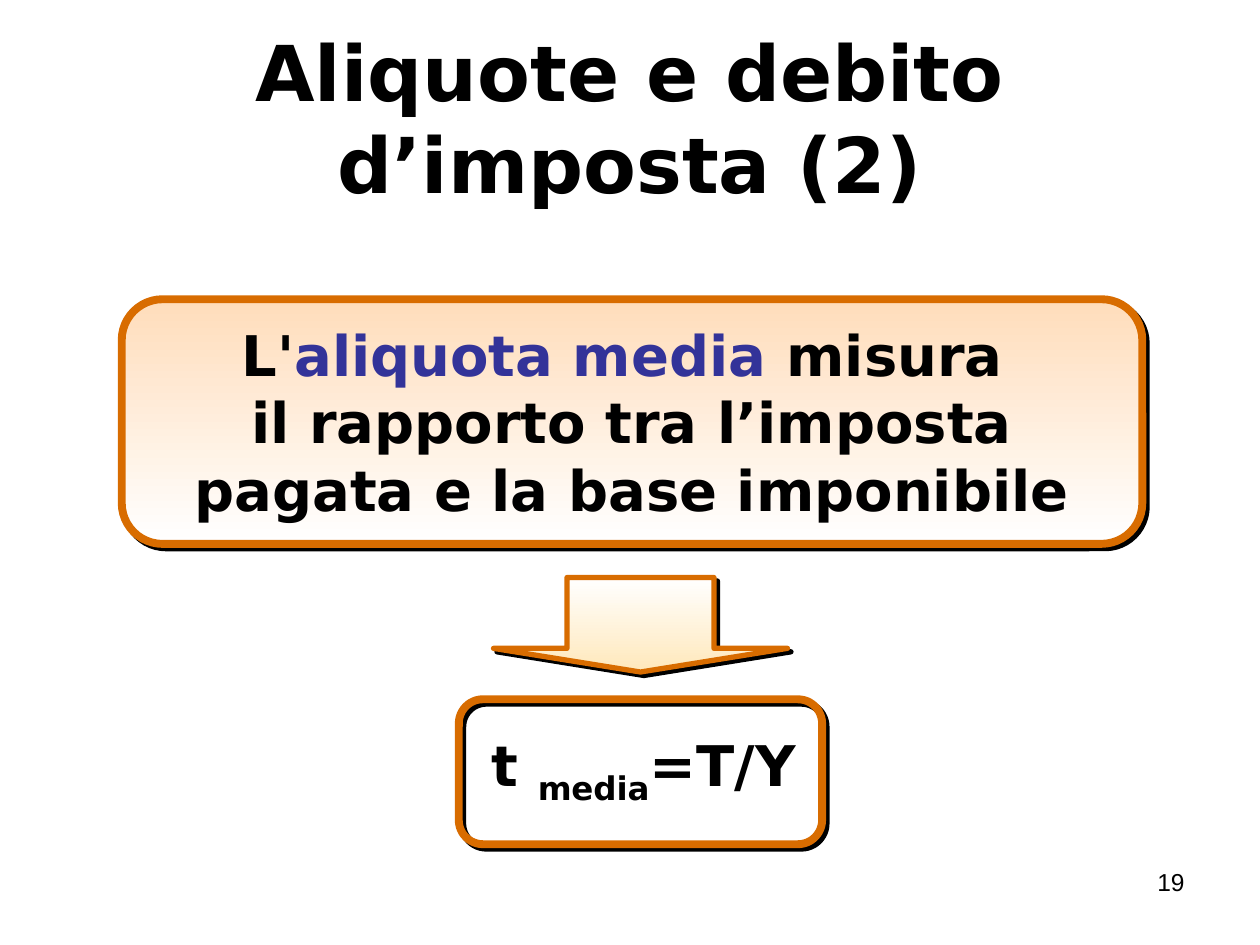
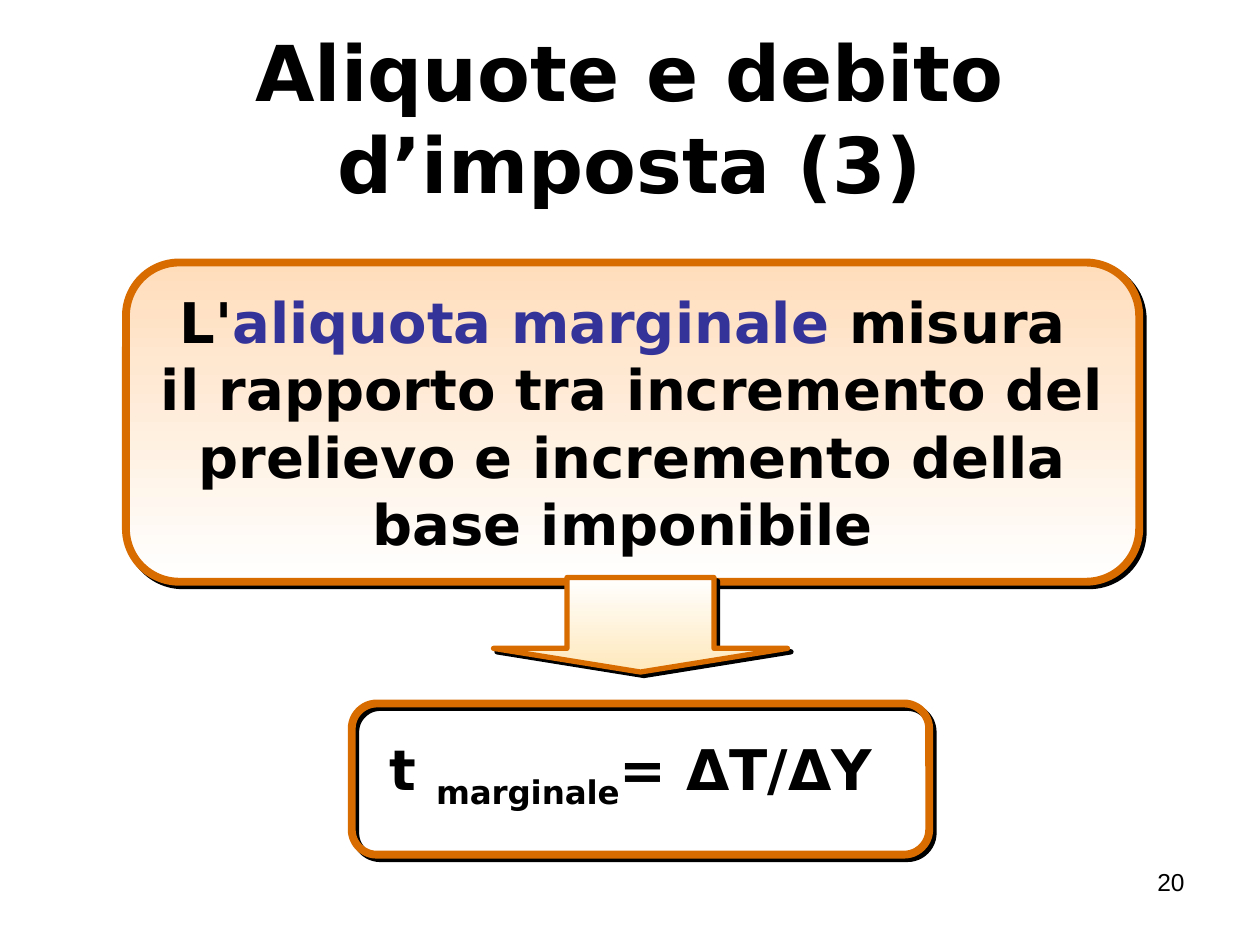
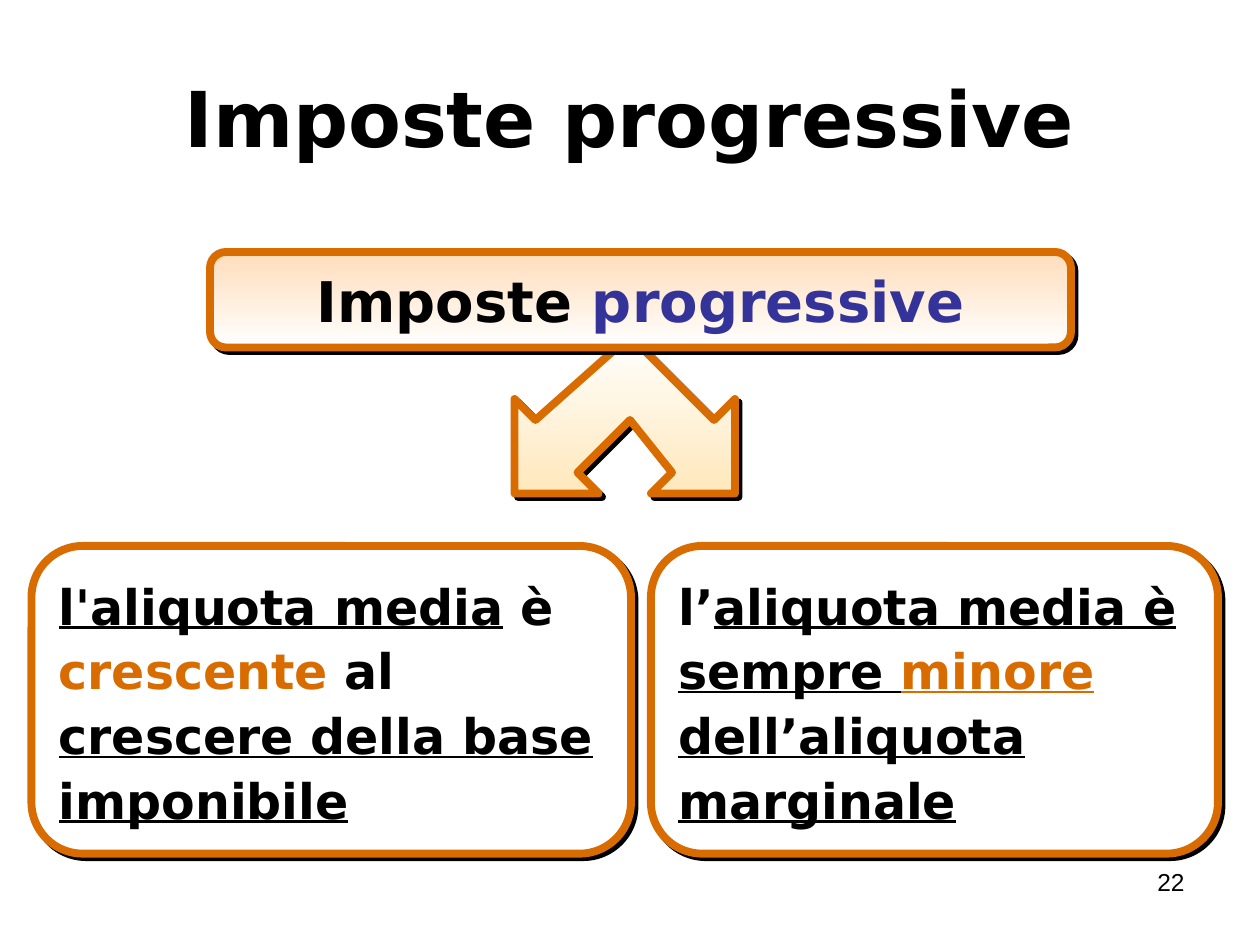
"""Build three slides on average, marginal and progressive tax rates."""
from dataclasses import dataclass

from lxml import etree
from pptx import Presentation
from pptx import util as u
from pptx.dml.color import RGBColor
from pptx.enum import shapes, text
from pptx.oxml.ns import qn


@dataclass(frozen=True)
class Theme:
    """Colours, fonts and type sizes shared by all slides."""
    black: str = "000000"
    white: str = "FFFFFF"
    blue: str = "333399"
    orange: str = "D86C00"
    peach: str = "FFDDBB"
    cream: str = "FFE8BB"
    face: str = "DejaVu Sans"
    number_face: str = "Arial"
    title_size: int = 44
    main_size: int = 32
    detail_size: int = 28
    number_size: int = 14
    thick: float = 4.5
    thin: float = 3


THEME = Theme()
COLUMNS, ROWS = 120, 90
CELL = u.Inches(10) // COLUMNS
CENTER, LEFT, RIGHT = text.PP_ALIGN.CENTER, text.PP_ALIGN.LEFT, text.PP_ALIGN.RIGHT
TITLE_AREA = (6, 3.6, 108, 15)
NUMBER_AREA = (86, 82, 28, 6.2)
ARROW_AREA = (47, 55, 28, 9)
SPLIT_APEX = (59.5, 32)
SPLIT_HALF = [(8.5, 8.4), (10.6, 6.3), (10.6, 14.7), (2.2, 14.7), (4.2, 12.6)]
SPLIT_NOTCH = (0, 8.4)


def place(area):
    """Turn grid columns and rows into slide lengths."""
    return [u.Emu(round(cells * CELL)) for cells in area]


def add_span(para, wording, color=None, underline=None, subscript=False):
    """Append a run, breaking the line at each newline."""
    for index, line in enumerate(wording.split("\n")):
        if index:
            para.add_line_break()
        span = para.add_run()
        span.text = line
        if color:
            span.font.color.rgb = RGBColor.from_string(color)
        if underline:
            span.font.underline = True
        if subscript:
            span._r.get_or_add_rPr().set("baseline", "-25000")


def write(box, spans, size, align=CENTER, middle=True, face=THEME.face, bold=True, spacing=None):
    """Fill a box with one paragraph made of spans."""
    frame = box.text_frame
    frame.word_wrap = True
    frame.vertical_anchor = text.MSO_ANCHOR.MIDDLE if middle else text.MSO_ANCHOR.TOP
    para = frame.paragraphs[0]
    para.alignment = align
    if spacing:
        para.line_spacing = spacing
    font = para.font
    font.name, font.size, font.bold = face, u.Pt(size), bold
    font.color.rgb = RGBColor.from_string(THEME.black)
    for wording, style in spans:
        add_span(para, wording, **style)


def add_text(page, area, spans, size, **style):
    """Add a text box on the grid."""
    write(page.shapes.add_textbox(*place(area)), spans, size, **style)


def decorate(shape, colors=(), width=THEME.thick):
    """Give a shape its fill, orange outline and hard shadow."""
    if not colors:
        shape.fill.background()
    elif len(colors) == 1:
        shape.fill.solid()
        shape.fill.fore_color.rgb = RGBColor.from_string(colors[0])
    else:
        shape.fill.gradient()
        shape.fill.gradient_angle = 270
        for position, (stop, color) in enumerate(zip(shape.fill.gradient_stops, colors)):
            stop.position = position
            stop.color.rgb = RGBColor.from_string(color)
    shape.line.color.rgb = RGBColor.from_string(THEME.orange)
    shape.line.width = u.Pt(width)
    shape.shadow.inherit = False
    effects = shape._element.spPr.find(qn("a:effectLst"))
    shadow = etree.SubElement(effects, qn("a:outerShdw"), blurRad="0", dist=str(u.Pt(2.8)),
                              dir="2700000", algn="ctr", rotWithShape="0")
    etree.SubElement(shadow, qn("a:srgbClr"), val=THEME.black)


def add_panel(page, area, colors=()):
    """Add a rounded panel."""
    panel = page.shapes.add_shape(shapes.MSO_SHAPE.ROUNDED_RECTANGLE, *place(area))
    decorate(panel, colors)
    return panel


def add_banner(page, area, spans):
    """Add a peach panel with a main statement."""
    write(add_panel(page, area, (THEME.peach, THEME.white)), spans, THEME.main_size)


def add_detail(page, area, spans):
    """Add a white panel with left-aligned text."""
    write(add_panel(page, area, (THEME.white,)), spans, THEME.detail_size,
          align=LEFT, spacing=1.1)


def add_down_arrow(page):
    """Add the arrow from the definition to the formula."""
    arrow = page.shapes.add_shape(shapes.MSO_SHAPE.DOWN_ARROW, *place(ARROW_AREA))
    arrow.adjustments[1] = 0.25
    decorate(arrow, (THEME.white, THEME.cream), THEME.thin)


def add_split_arrow(page):
    """Add the two-headed arrow, mirrored about its apex."""
    left_half = [(-across, down) for across, down in reversed(SPLIT_HALF)]
    left, top = SPLIT_APEX
    outline = [(left + across, top + down)
               for across, down in SPLIT_HALF + [SPLIT_NOTCH] + left_half]
    builder = page.shapes.build_freeform(left, top, scale=CELL)
    builder.add_line_segments(outline, close=True)
    decorate(builder.convert_to_shape(), (THEME.white, THEME.cream))


def add_page(deck, title, number):
    """Add a blank slide with its title and page number."""
    page = deck.slides.add_slide(deck.slide_layouts[6])
    add_text(page, TITLE_AREA, [(title, {})], THEME.title_size)
    add_text(page, NUMBER_AREA, [(str(number), {})], THEME.number_size, align=RIGHT,
             middle=False, face=THEME.number_face, bold=False)
    return page


def add_rate_page(deck, title, number, definition_area, definition, panel_area,
                  formula_area, rate, formula):
    """Add a slide that leads from a rate's definition to its formula."""
    page = add_page(deck, title, number)
    before, term, after = definition
    add_banner(page, definition_area,
               [(before, {}), (term, {"color": THEME.blue}), (after, {})])
    add_down_arrow(page)
    add_panel(page, panel_area)
    add_text(page, formula_area, [("t ", {}), (rate, {"subscript": True}), (formula, {})],
             THEME.main_size, middle=False)


def add_progressive_page(deck):
    """Add the slide on progressive taxes."""
    page = add_page(deck, "Imposte progressive", 22)
    underlined, accent = {"underline": True}, {"color": THEME.orange}
    add_split_arrow(page)
    add_banner(page, (20, 24, 82, 9.1),
               [("Imposte ", {}), ("progressive", {"color": THEME.blue})])
    add_detail(page, (3, 52, 57.1, 29.3), [
        ("l'aliquota media", underlined), (" è ", {}), ("crescente ", accent),
        ("al ", {}), ("crescere della base imponibile", underlined)])
    add_detail(page, (62, 52, 54, 29.3), [
        ("l’", {}), ("aliquota media è sempre ", underlined),
        ("minore ", {**accent, **underlined}), ("dell’aliquota marginale", underlined)])


def main():
    """Build and save the deck."""
    deck = Presentation()
    deck.slide_width, deck.slide_height = COLUMNS * CELL, ROWS * CELL
    add_rate_page(
        deck, "Aliquote e debito d’imposta (2)", 19, (11.6, 28.5, 97.2, 23.3),
        ("L'", "aliquota media ",
         "misura \nil rapporto tra l’imposta pagata e la base imponibile"),
        (43.7, 66.6, 34.6, 13.8), (44, 69, 34.6, 7.6), "media", "=T/Y")
    add_rate_page(
        deck, "Aliquote e debito d’imposta (3)", 20, (12, 25, 96.5, 30.4),
        ("L'", "aliquota marginale",
         " misura \nil rapporto tra incremento del prelievo e incremento della base imponibile "),
        (33.5, 67, 55, 14.4), (32, 69.4, 56.2, 7.6), "marginale", "= ΔT/ΔY")
    add_progressive_page(deck)
    deck.save("out.pptx")


if __name__ == "__main__":
    main()
